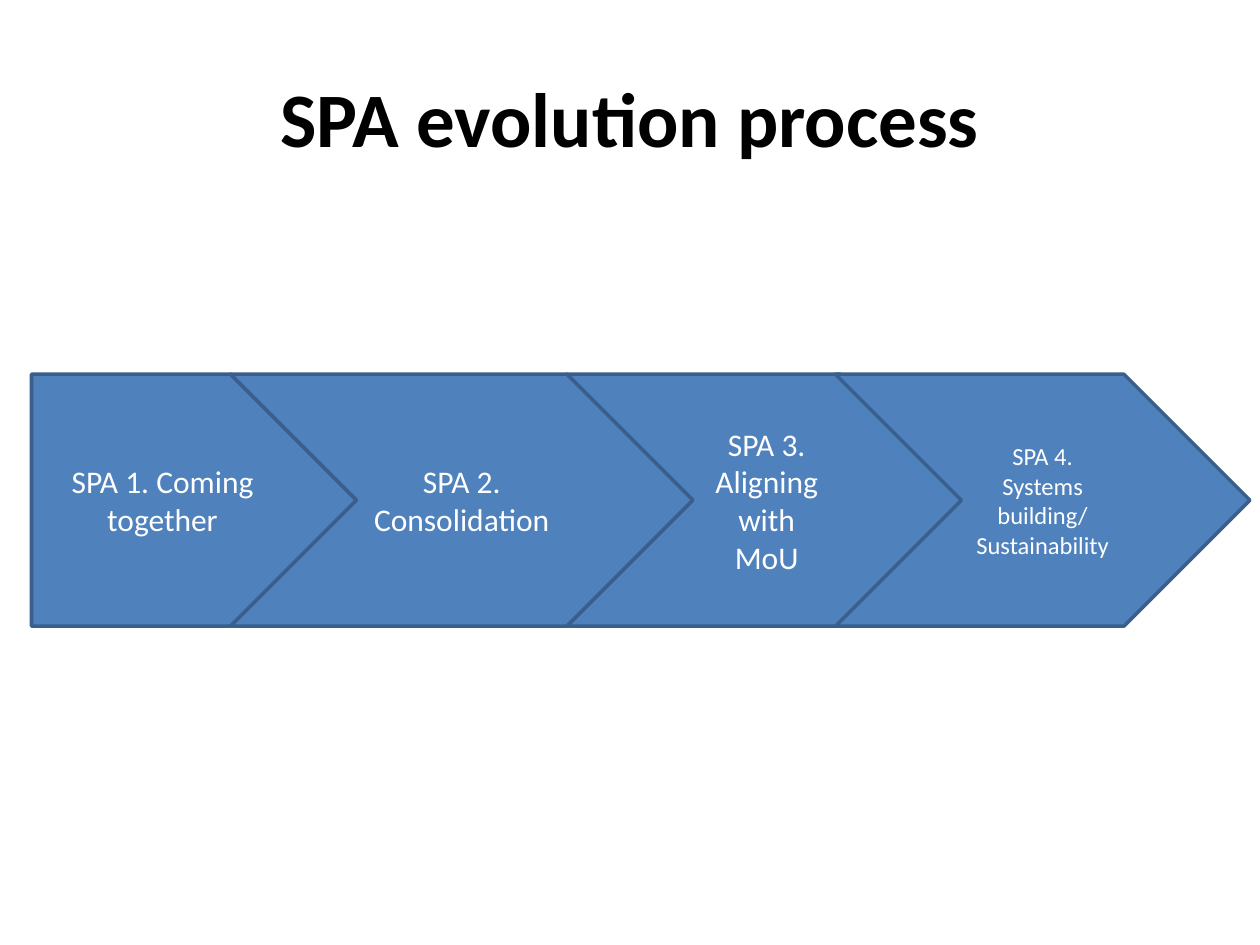
"""Build the SPA evolution process slide: a title above four chained arrows."""
from pptx import Presentation
from pptx.dml.color import RGBColor
from pptx.enum.shapes import MSO_SHAPE
from pptx.enum.text import MSO_ANCHOR, PP_ALIGN
from pptx.util import Inches, Pt

COLORS = {"title": "000000", "fill": "4F81BD", "line": "3A5F8C", "label": "FFFFFF"}
STAGES = [
    (MSO_SHAPE.PENTAGON, 0.25, 2.58, 18, ["SPA 1. Coming together"]),
    (MSO_SHAPE.CHEVRON, 1.83, 3.67, 18, ["SPA 2. Consolidation"]),
    (MSO_SHAPE.CHEVRON, 4.5, 3.17, 18, ["SPA 3. Aligning with MoU"]),
    (MSO_SHAPE.CHEVRON, 6.63, 3.29, 14, ["SPA 4. Systems building/", "Sustainability"]),
]
STAGE_TOP, STAGE_HEIGHT = 2.97, 2


def write_text(shape, lines, size, color, bold=False):
    frame = shape.text_frame
    frame.word_wrap = True
    frame.vertical_anchor = MSO_ANCHOR.MIDDLE
    frame.text = "\n".join(lines)
    for paragraph in frame.paragraphs:
        paragraph.alignment = PP_ALIGN.CENTER
        paragraph.font.name = "Calibri"
        paragraph.font.size = Pt(size)
        paragraph.font.bold = bold
        paragraph.font.color.rgb = RGBColor.from_string(COLORS[color])


deck = Presentation()
deck.slide_width, deck.slide_height = Inches(10), Inches(7.5)
page = deck.slides.add_slide(deck.slide_layouts[6])

title = page.shapes.add_textbox(Inches(0.5), Inches(0.3), Inches(9), Inches(1.25))
write_text(title, ["SPA evolution process"], 44, "title", bold=True)

for kind, left, width, size, lines in STAGES:
    stage = page.shapes.add_shape(
        kind, Inches(left), Inches(STAGE_TOP), Inches(width), Inches(STAGE_HEIGHT)
    )
    stage.shadow.inherit = False
    stage.fill.solid()
    stage.fill.fore_color.rgb = RGBColor.from_string(COLORS["fill"])
    stage.line.color.rgb = RGBColor.from_string(COLORS["line"])
    stage.line.width = Pt(2)
    write_text(stage, lines, size, "label")

deck.save("out.pptx")
